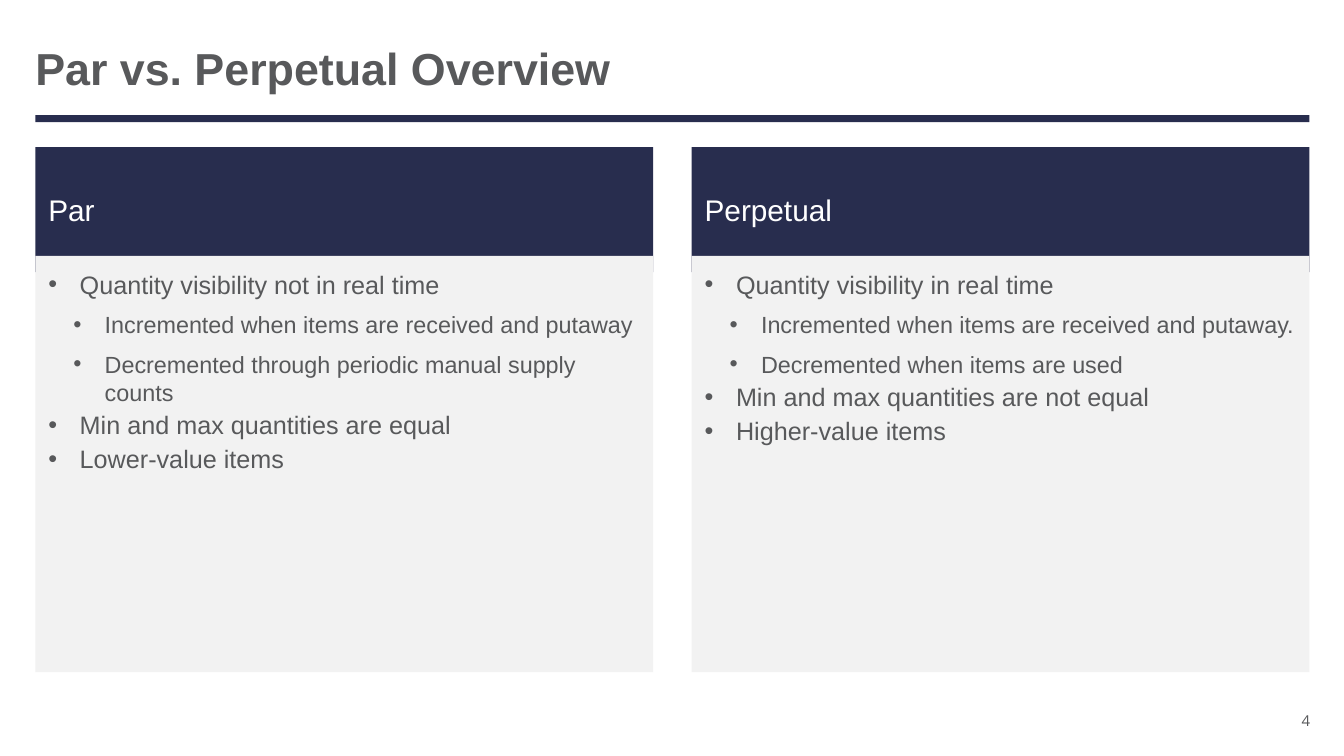
"""Build the Par vs. Perpetual overview slide."""
from lxml import etree
from pptx import Presentation
from pptx.dml.color import RGBColor
from pptx.enum.shapes import MSO_SHAPE
from pptx.enum.text import MSO_ANCHOR, PP_ALIGN
from pptx.oxml.ns import qn
from pptx.util import Cm, Pt

TITLE = "Par vs. Perpetual Overview"
PAGE_NUMBER = "4"
COLUMNS = [
    ("Par", [
        (0, "Quantity visibility not in real time"),
        (1, "Incremented when items are received and putaway"),
        (1, "Decremented through periodic manual supply counts"),
        (0, "Min and max quantities are equal"),
        (0, "Lower-value items"),
    ]),
    ("Perpetual", [
        (0, "Quantity visibility in real time"),
        (1, "Incremented when items are received and putaway."),
        (1, "Decremented when items are used"),
        (0, "Min and max quantities are not equal"),
        (0, "Higher-value items"),
    ]),
]

NAVY = RGBColor(0x28, 0x2D, 0x4E)
PALE = RGBColor(0xF2, 0xF2, 0xF2)
GRAY = RGBColor(0x58, 0x59, 0x5B)
WHITE = RGBColor(0xFF, 0xFF, 0xFF)
RECTANGLE = MSO_SHAPE.RECTANGLE
TOP, MIDDLE = MSO_ANCHOR.TOP, MSO_ANCHOR.MIDDLE
LEFT, RIGHT = PP_ALIGN.LEFT, PP_ALIGN.RIGHT

MARGIN, CONTENT_WIDTH = 0.89, 32.11
COLUMN_WIDTH = 15.57
COLUMN_STEP = CONTENT_WIDTH - COLUMN_WIDTH
PADDING = 0.33
HANGING = 0.79
LEVELS = [(18, 2.7, 0.79), (16.7, 8, 1.42)]


def add_block(slide, left, top, width, height, color):
    shape = slide.shapes.add_shape(RECTANGLE, Cm(left), Cm(top), Cm(width), Cm(height))
    shape.shadow.inherit = False
    shape.fill.solid()
    shape.fill.fore_color.rgb = color
    shape.line.fill.background()
    return shape


def add_label(slide, left, top, width, height):
    return slide.shapes.add_textbox(Cm(left), Cm(top), Cm(width), Cm(height))


def set_frame(shape, anchor, horizontal, vertical):
    frame = shape.text_frame
    frame.word_wrap = True
    frame.vertical_anchor = anchor
    frame.margin_left = frame.margin_right = Cm(horizontal)
    frame.margin_top = frame.margin_bottom = Cm(vertical)
    return frame


def write(paragraph, text, size, color, font="Arial", bold=False, align=LEFT):
    paragraph.text = text
    paragraph.alignment = align
    run_font = paragraph.runs[0].font
    run_font.name, run_font.size, run_font.bold = font, Pt(size), bold
    run_font.color.rgb = color


def add_bullet(paragraph, indent):
    properties = paragraph._p.get_or_add_pPr()
    properties.set("marL", str(Cm(indent)))
    properties.set("indent", str(-Cm(HANGING)))
    etree.SubElement(properties, qn("a:buFont"), typeface="Arial")
    etree.SubElement(properties, qn("a:buChar"), char="•")


def add_column(slide, left, heading, items):
    header = add_block(slide, left, 3.71, COLUMN_WIDTH, 3.15, NAVY)
    paragraph = set_frame(header, MIDDLE, PADDING, PADDING).paragraphs[0]
    write(paragraph, heading, 21.3, WHITE)
    paragraph.space_before = Pt(2.7)

    body = add_block(slide, left, 6.45, COLUMN_WIDTH, 10.49, PALE)
    frame = set_frame(body, TOP, PADDING, PADDING)
    for index, (level, text) in enumerate(items):
        paragraph = frame.add_paragraph() if index else frame.paragraphs[0]
        size, space, indent = LEVELS[level]
        write(paragraph, text, size, GRAY)
        paragraph.level = level
        paragraph.space_before = Pt(space)
        add_bullet(paragraph, indent)


def main():
    presentation = Presentation()
    presentation.slide_width, presentation.slide_height = Cm(33.87), Cm(19.05)
    slide = presentation.slides.add_slide(presentation.slide_layouts[6])

    add_block(slide, MARGIN, 2.9, CONTENT_WIDTH, 0.18, NAVY)
    title = add_label(slide, MARGIN, 1.04, CONTENT_WIDTH, 1.55)
    paragraph = set_frame(title, MIDDLE, 0, 0.13).paragraphs[0]
    write(paragraph, TITLE, 32, GRAY, bold=True)
    paragraph.line_spacing = 0.85

    for index, (heading, items) in enumerate(COLUMNS):
        add_column(slide, MARGIN + index * COLUMN_STEP, heading, items)

    number = add_label(slide, 31.75, 17.58, 1.27, 1.17)
    paragraph = set_frame(number, MIDDLE, 0, 0).paragraphs[0]
    write(paragraph, PAGE_NUMBER, 10.7, GRAY, font="Open Sans", align=RIGHT)

    presentation.save("out.pptx")


if __name__ == "__main__":
    main()
